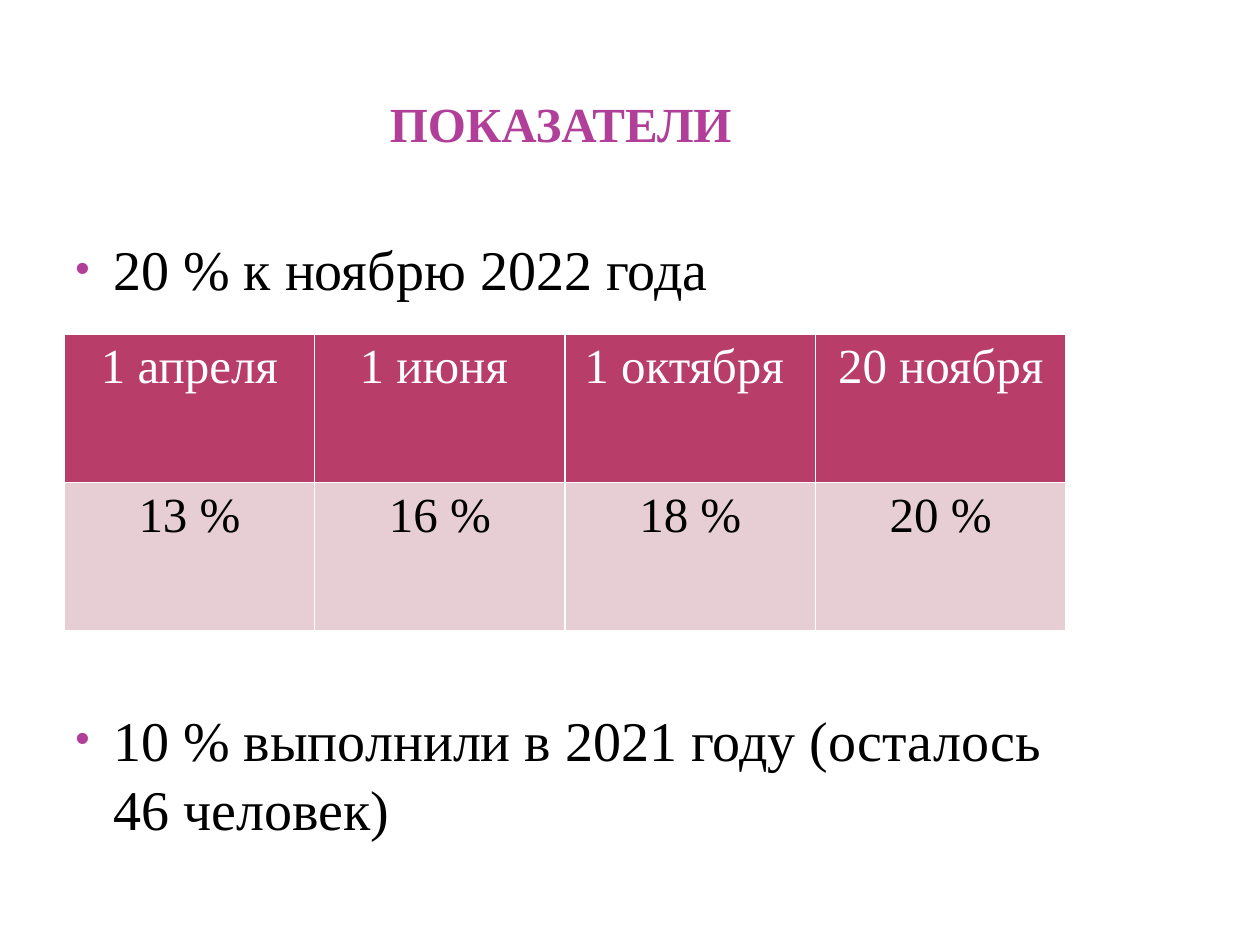
import pptx
import pptx.util
import pptx.dml.color
import pptx.enum.text
import pptx.oxml
import pptx.oxml.ns


def tint(code):
    return pptx.dml.color.RGBColor.from_string(code)


class Deck:
    face = "Times New Roman"
    mauve = "B13F9A"
    rose = "B83D68"
    blush = "E6CED4"
    white = "FFFFFF"
    black = "000000"

    def __init__(self, wide, high):
        self.file = pptx.Presentation()
        self.file.slide_width = pptx.util.Inches(wide)
        self.file.slide_height = pptx.util.Inches(high)
        self.slide = self.file.slides.add_slide(self.file.slide_layouts[6])

    def place(self, left, top, wide, high):
        across, down = self.file.slide_width, self.file.slide_height
        return [int(n) for n in (left * across, top * down, wide * across, high * down)]

    def style(self, para, size, code, bold=False):
        font = para.font
        font.name = self.face
        font.size = pptx.util.Pt(size)
        font.bold = bold
        font.color.rgb = tint(code)

    def node(self, host, tag, **values):
        item = pptx.oxml.parse_xml(f"<{tag} {pptx.oxml.ns.nsdecls('a')}/>")
        for key, value in values.items():
            item.set(key, str(value))
        host.append(item)
        return item

    def frame(self, area):
        frame = self.slide.shapes.add_textbox(*self.place(*area)).text_frame
        frame.word_wrap = True
        return frame

    def title(self, text, area):
        frame = self.frame(area)
        frame.vertical_anchor = pptx.enum.text.MSO_ANCHOR.MIDDLE
        frame.margin_left = frame.margin_right = pptx.util.Inches(0.05)
        frame.margin_top = frame.margin_bottom = 0
        para = frame.paragraphs[0]
        para.text = text
        para.alignment = pptx.enum.text.PP_ALIGN.CENTER
        self.style(para, 28, self.mauve, True)

    def bullets(self, lines, area, gap):
        frame = self.frame(area)
        for rank, text in enumerate(lines):
            para = frame.add_paragraph() if rank else frame.paragraphs[0]
            para.text = text
            para.line_spacing = 1.04
            if rank:
                para.space_before = pptx.util.Pt(gap)
            props = para._p.get_or_add_pPr()
            indent = pptx.util.Inches(0.3)
            props.set("marL", str(indent))
            props.set("indent", str(-indent))
            paint = self.node(props, "a:buClr")
            self.node(paint, "a:srgbClr", val=self.mauve)
            self.node(props, "a:buSzPct", val=73000)
            self.node(props, "a:buFont", typeface="Arial")
            self.node(props, "a:buChar", char="•")
            self.style(para, 32, self.black)

    def edge(self, cell):
        props = cell._tc.get_or_add_tcPr()
        for rank, side in enumerate("LRTB"):
            line = self.node(props, f"a:ln{side}", w=pptx.util.Pt(1))
            fill = self.node(line, "a:solidFill")
            self.node(fill, "a:srgbClr", val=self.white)
            props.remove(line)
            props.insert(rank, line)

    def table(self, rows, area):
        shape = self.slide.shapes.add_table(len(rows), len(rows[0]), *self.place(*area))
        looks = [(self.rose, self.white), (self.blush, self.black)]
        for row, texts in enumerate(rows):
            back, ink = looks[row]
            for col, text in enumerate(texts):
                cell = shape.table.cell(row, col)
                cell.text = text
                cell.fill.solid()
                cell.fill.fore_color.rgb = tint(back)
                para = cell.text_frame.paragraphs[0]
                para.alignment = pptx.enum.text.PP_ALIGN.CENTER
                self.style(para, 28, ink)
                self.edge(cell)


def main():
    deck = Deck(10, 7.5)
    deck.title("ПОКАЗАТЕЛИ", (0.05, 0.35 / 7.5, 0.79, 1.25 / 7.5))
    deck.bullets(
        ["20 % к ноябрю 2022 года", "10 % выполнили в 2021 году (осталось 46 человек)"],
        (0.05, 1.79 / 7.5, 0.79, 5.27 / 7.5),
        229,
    )
    deck.table(
        [
            ["1 апреля", "1 июня ", "1 октября ", "20 ноября"],
            ["13 %", "16 %", "18 %", "20 %"],
        ],
        (0.051, 2.65 / 7.5, 0.795, 2.36 / 7.5),
    )
    deck.file.save("out.pptx")


if __name__ == "__main__":
    main()
